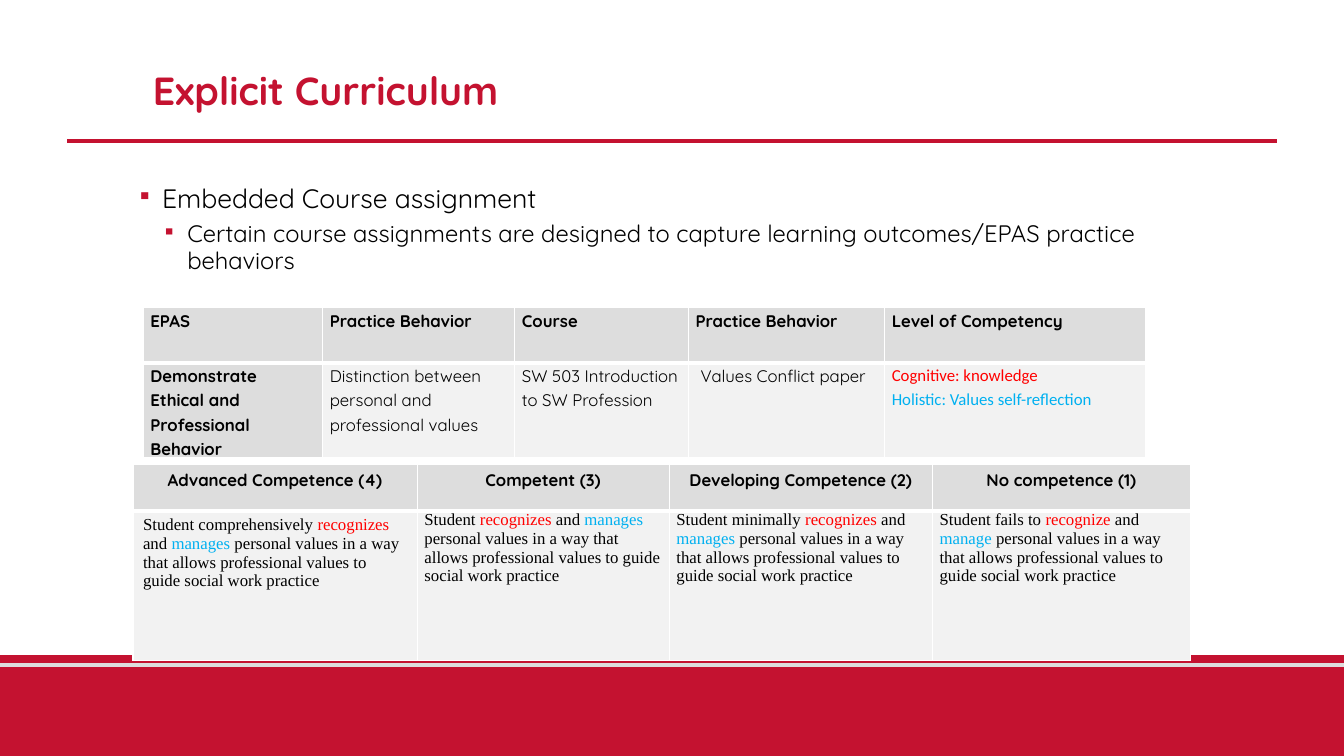
import pptx
import pptx.util
import pptx.dml.color
import pptx.enum.shapes
import pptx.enum.text
from lxml import etree

Pt = pptx.util.Pt
ALIGN = pptx.enum.text.PP_ALIGN
ANCHOR = pptx.enum.text.MSO_ANCHOR

# Content
TITLE = "Explicit Curriculum"
BULLETS = [
    ("Embedded Course assignment", "bullet", 18, 12),
    ("Certain course assignments are designed to capture learning outcomes/EPAS "
     "practice behaviors", "subbullet", 36, 5),
]
EPAS_HEAD = ["EPAS", "Practice Behavior", "Course", "Practice Behavior",
             "Level of Competency"]
EPAS_ROW = [
    "Demonstrate Ethical and Professional Behavior",
    "Distinction between personal and professional values",
    "SW 503 Introduction to SW Profession",
    "Values Conflict paper",
]
COMPETENCY = [("Cognitive: knowledge", "red"),
              ("Holistic: Values self-reflection", "blue")]
RUBRIC_HEAD = ["Advanced Competence (4)", "Competent (3)",
               "Developing Competence (2)", "No competence (1)"]
RUBRIC_ROW = [
    ("Student comprehensively ", "recognizes", "manages"),
    ("Student ", "recognizes", "manages"),
    ("Student minimally ", "recognizes", "manages"),
    ("Student fails to ", "recognize", "manage"),
]
RUBRIC_END = (" personal values in a way that allows professional values to guide "
              "social work practice")

# Theme and measures
THEME = {
    "color": {"brand": "C41230", "rule": "DDDDDD", "head": "DDDDDD", "body": "F2F2F2",
              "white": "FFFFFF", "black": "000000", "red": "FF0000", "blue": "00B0F0"},
    "size": {"title": 28, "bullet": 19, "subbullet": 17, "cell": 12},
    "font": {"main": "Quicksand", "level": "Calibri", "rubric": "Times New Roman"},
}
WIDTH, HEIGHT = 960, 540
EPAS_COLS, EPAS_ROWS = [128.2, 137.3, 124, 140.2, 186.4], [39.6, 68]
RUBRIC_COLS, RUBRIC_ROWS = [203, 180, 188, 184.3], [33.1, 106.6]
TIGHT = (5.2, 0, 5.2, 0)
INDENTED = (8.8, 0, 5.2, 0)
ROOMY = (7.2, 3.6, 7.2, 3.6)
CENTERED = {"alignment": ALIGN.CENTER}
LOOSE = {"line_spacing": 1.15}

prs = pptx.Presentation()
prs.slide_width, prs.slide_height = Pt(WIDTH), Pt(HEIGHT)
s = prs.slides.add_slide(prs.slide_layouts[6])


def rgb(name):
    return pptx.dml.color.RGBColor.from_string(THEME["color"][name])


def style(target, values):
    for name, value in values.items():
        setattr(target, name, value)


def add_xml(parent, tag, **attributes):
    return etree.SubElement(parent, pptx.oxml.ns.qn(tag), attributes)


def add_run(p, text, size="cell", color="black", font="main", bold=False):
    r = p.add_run()
    r.text = text
    style(r.font, {"size": Pt(THEME["size"][size]), "name": THEME["font"][font],
                   "bold": bold})
    r.font.color.rgb = rgb(color)


def add_rule(left, right, y, color):
    rule = s.shapes.add_connector(pptx.enum.shapes.MSO_CONNECTOR.STRAIGHT,
                                  Pt(left), Pt(y), Pt(right), Pt(y))
    rule.line.color.rgb = rgb(color)
    rule.line.width = Pt(3)
    add_xml(rule._element.spPr, "a:effectLst")


def add_text_box(left, top, width, height, **values):
    tf = s.shapes.add_textbox(Pt(left), Pt(top), Pt(width), Pt(height)).text_frame
    style(tf, {"word_wrap": True, **values})
    return tf


def add_table(left, top, cols, rows):
    table = s.shapes.add_table(len(rows), len(cols), Pt(left), Pt(top),
                               Pt(sum(cols)), Pt(sum(rows))).table
    for column, width in zip(table.columns, cols):
        column.width = Pt(width)
    for row, height in zip(table.rows, rows):
        row.height = Pt(height)
    return table


def fill_cell(cell, paragraphs, fill, margins, bottom, layout):
    """Each paragraph is a list of runs; each run is a dict for add_run."""
    sides = ("margin_left", "margin_top", "margin_right", "margin_bottom")
    style(cell, dict(zip(sides, map(Pt, margins))))
    tcPr = cell._tc.get_or_add_tcPr()
    for side, width in (("L", 1), ("R", 1), ("T", 1), ("B", bottom)):
        line = add_xml(tcPr, "a:ln" + side, w=str(Pt(width)))
        add_xml(add_xml(line, "a:solidFill"), "a:srgbClr", val=THEME["color"]["white"])
    cell.fill.solid()
    cell.fill.fore_color.rgb = rgb(fill)
    tf = cell.text_frame
    for i, runs in enumerate(paragraphs):
        p = tf.add_paragraph() if i else tf.paragraphs[0]
        style(p, layout)
        for run in runs:
            add_run(p, **run)


def fill_header(table, labels, margins, layout):
    for col, label in enumerate(labels):
        fill_cell(table.cell(0, col), [[{"text": label, "bold": True}]],
                  "head", margins, 3, layout)


# Footer band and rules
band = s.shapes.add_shape(pptx.enum.shapes.MSO_SHAPE.RECTANGLE,
                          Pt(0), Pt(468), Pt(WIDTH), Pt(72))
band.shadow.inherit = False
band.fill.solid()
band.fill.fore_color.rgb = rgb("brand")
band.line.fill.background()
add_rule(0, WIDTH, 475, "rule")
add_rule(48, WIDTH - 48, 100.8, "brand")

# Bullets
tf = add_text_box(90.7, 117.4, 802.8, 100, margin_top=Pt(14.4))
for i, (text, size, indent, before) in enumerate(BULLETS):
    p = tf.add_paragraph() if i else tf.paragraphs[0]
    pPr = p._p.get_or_add_pPr()
    pPr.set("marL", str(Pt(indent)))
    pPr.set("indent", str(Pt(-18)))
    add_xml(add_xml(pPr, "a:buClr"), "a:srgbClr", val=THEME["color"]["brand"])
    add_xml(pPr, "a:buSzPct", val="80000")
    add_xml(pPr, "a:buChar", char="▪")
    style(p, {"space_before": Pt(before if i else 0), "line_spacing": 0.94})
    add_run(p, text, size)

# Title
tf = add_text_box(102.2, 15.8, 756, 101.5, vertical_anchor=ANCHOR.MIDDLE)
tf.paragraphs[0].line_spacing = 0.9
add_run(tf.paragraphs[0], TITLE, "title", "brand", bold=True)

# Curriculum table
epas = add_table(102.2, 219.6, EPAS_COLS, EPAS_ROWS)
fill_header(epas, EPAS_HEAD, TIGHT, LOOSE)
for col, text in enumerate(EPAS_ROW):
    first, last = col == 0, col == len(EPAS_ROW) - 1
    fill_cell(epas.cell(1, col), [[{"text": text, "bold": first}]],
              "head" if first else "body", INDENTED if last else TIGHT, 1, LOOSE)
levels = [[{"text": text, "color": color, "font": "level"}] for text, color in COMPETENCY]
fill_cell(epas.cell(1, len(EPAS_ROW)), levels, "body", TIGHT, 1, LOOSE)

# Rubric table
rubric = add_table(95, 331.9, RUBRIC_COLS, RUBRIC_ROWS)
fill_header(rubric, RUBRIC_HEAD, ROOMY, CENTERED)
for col, (opening, cognitive, holistic) in enumerate(RUBRIC_ROW):
    parts = [(opening, "black"), (cognitive, "red"), (" and ", "black"),
             (holistic, "blue"), (RUBRIC_END, "black")]
    runs = [{"text": text, "color": color, "font": "rubric"} for text, color in parts]
    fill_cell(rubric.cell(1, col), [runs], "body", TIGHT if col else ROOMY, 1, {})

prs.save("out.pptx")
